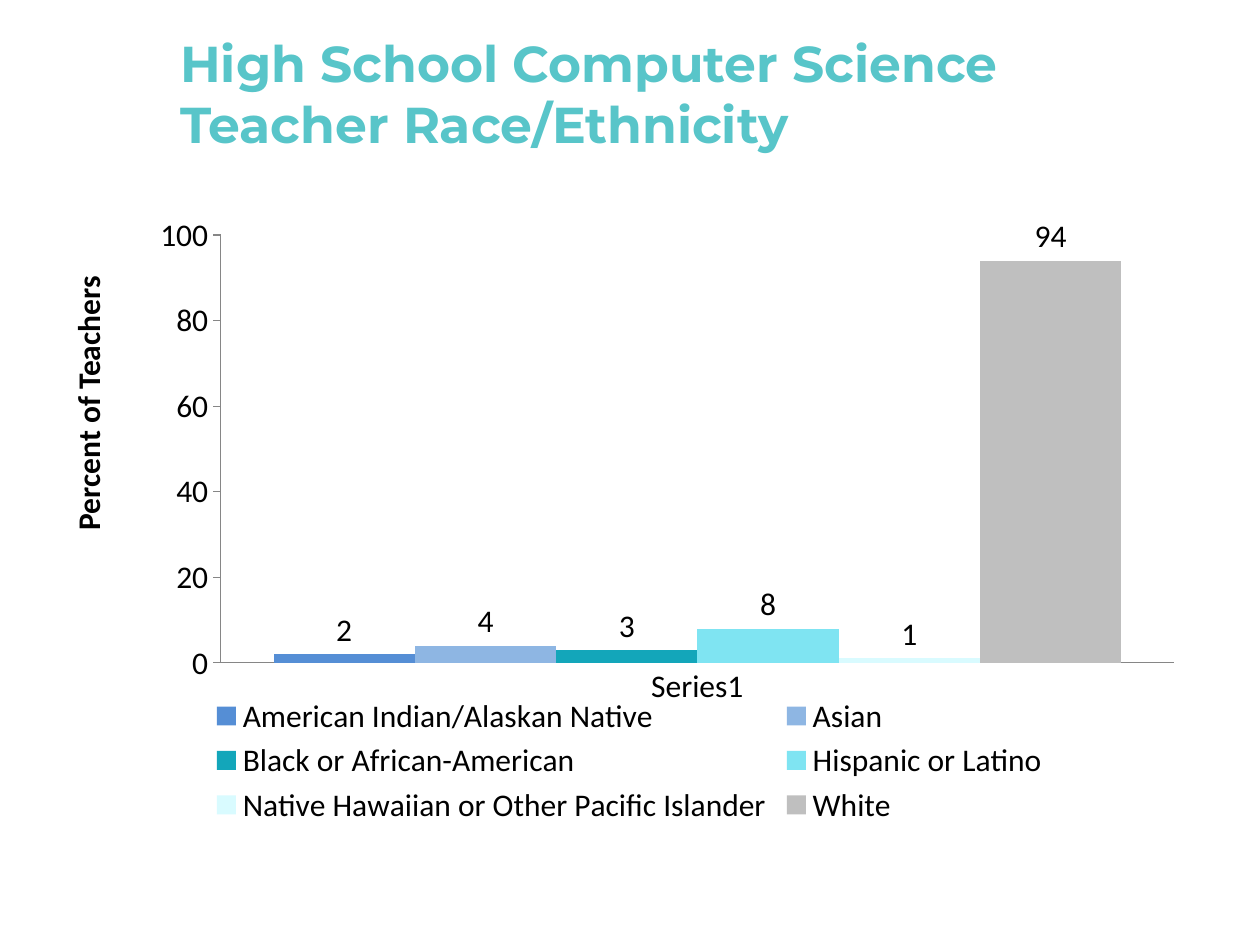
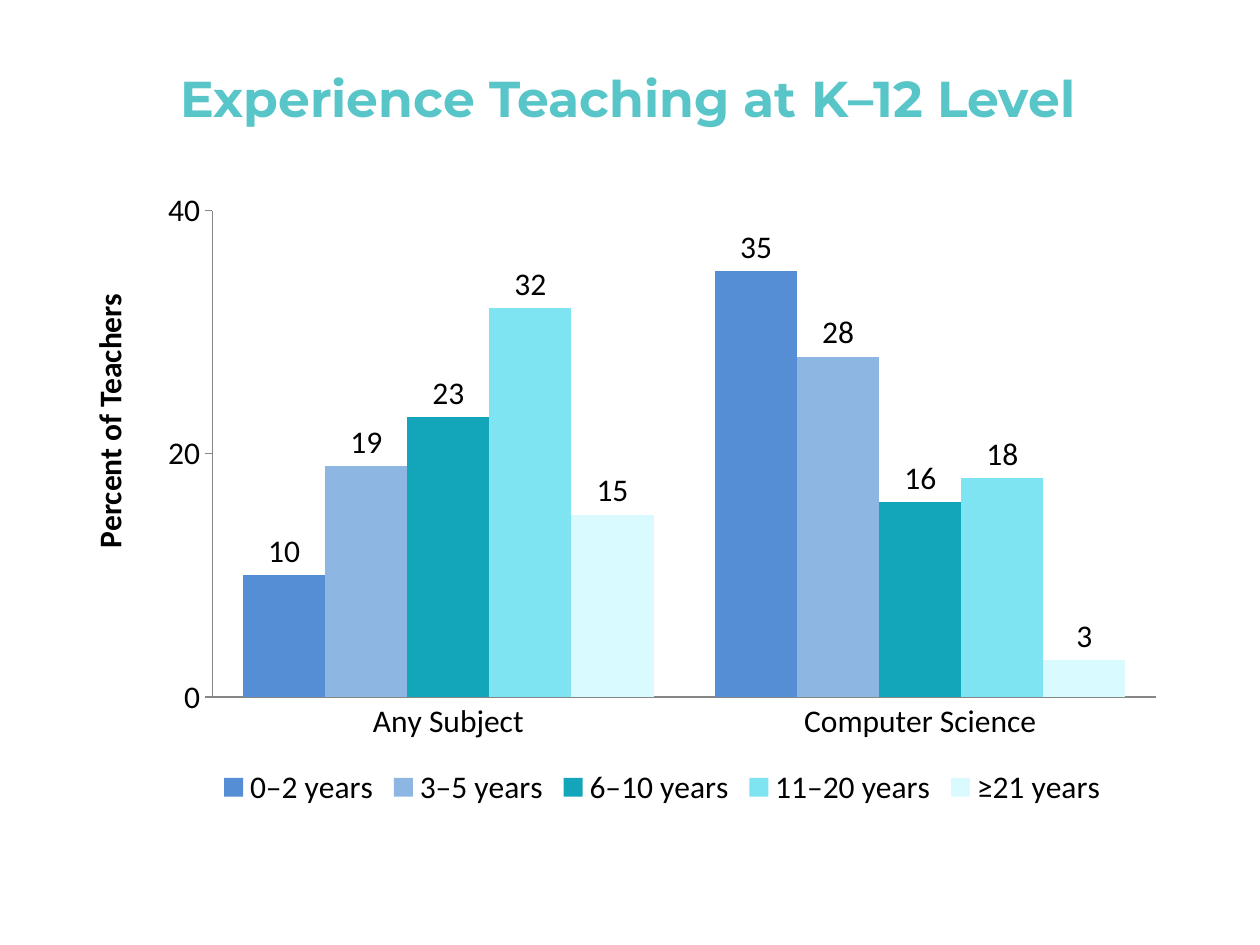
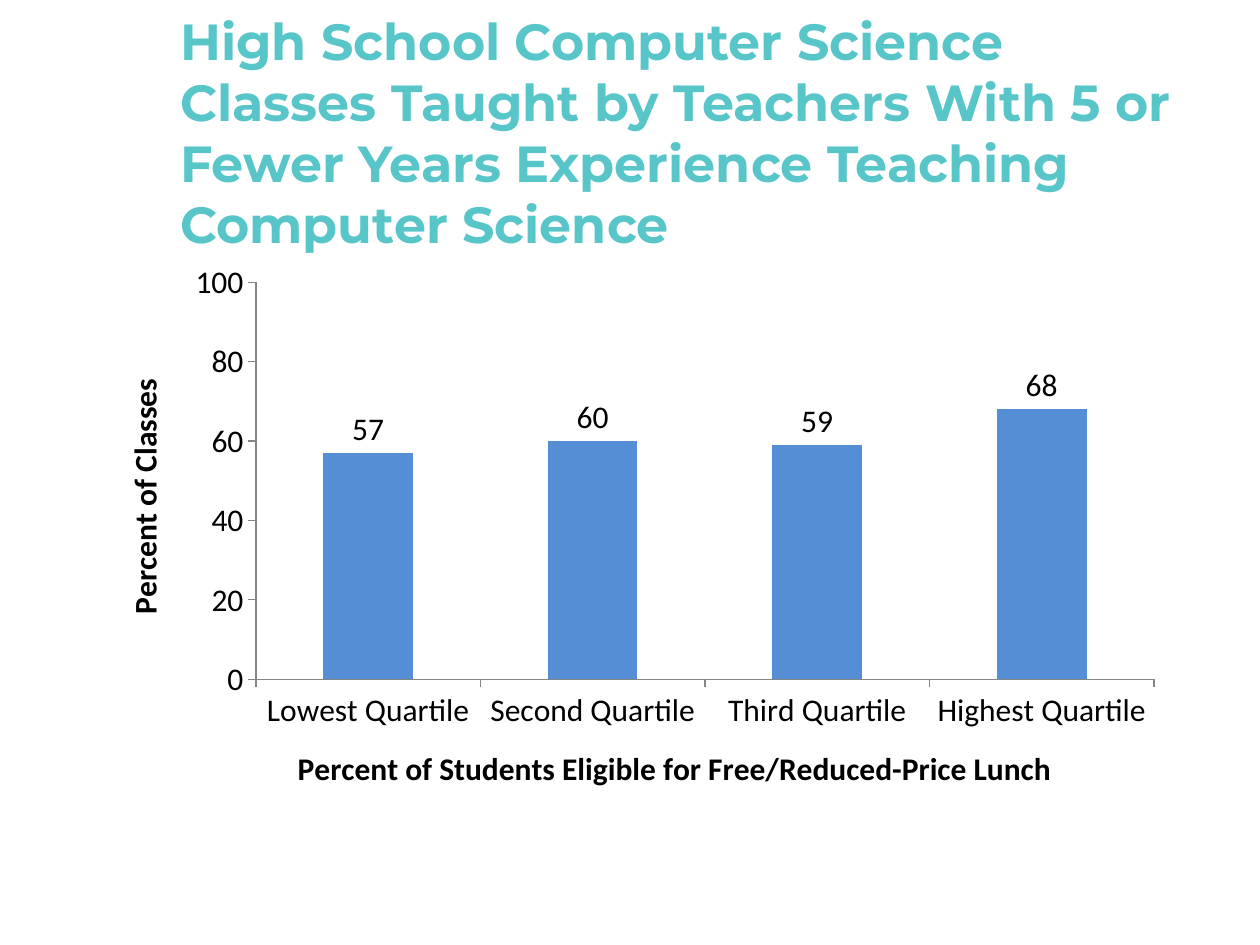
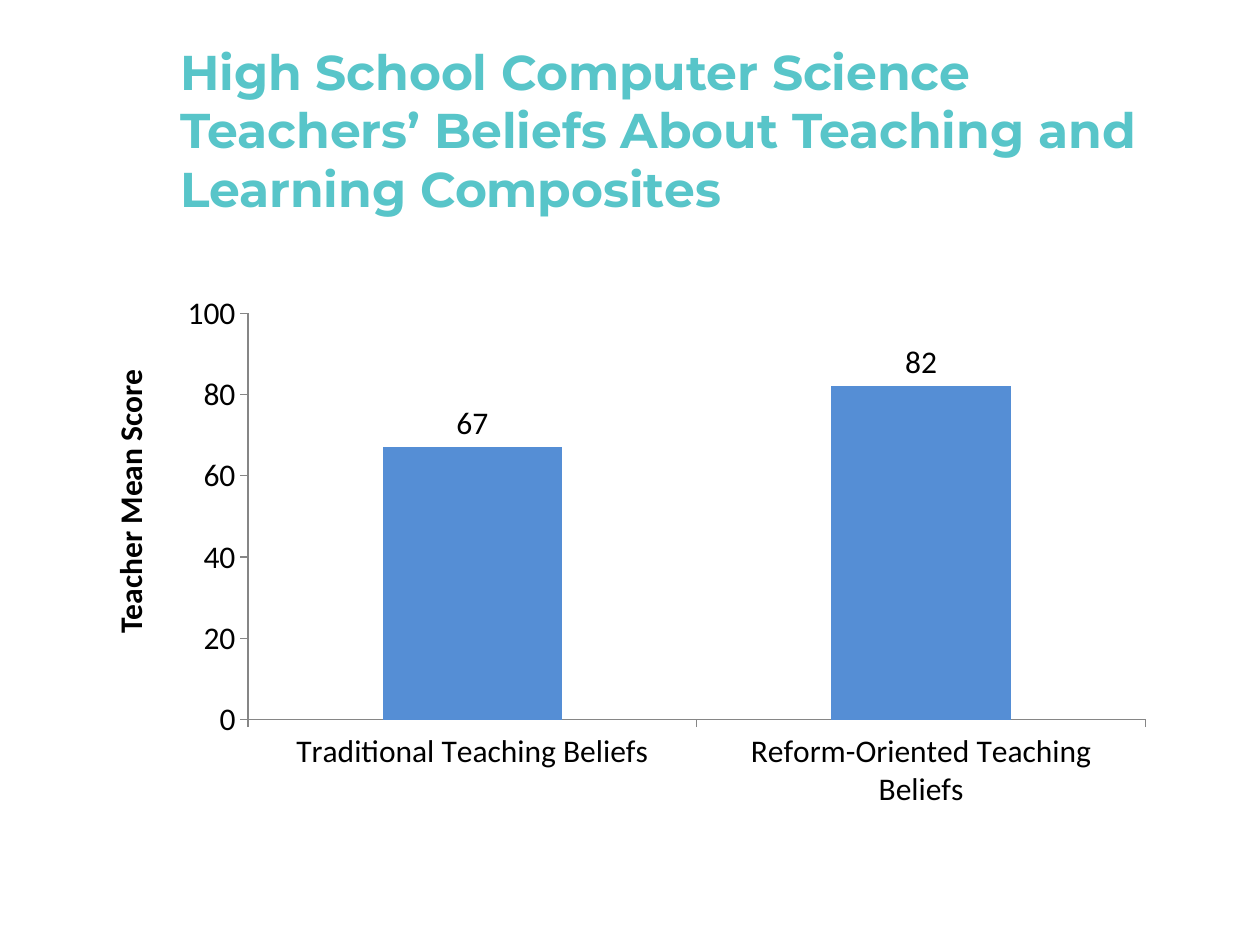
"""Builds four chart slides about high school computer science teachers."""
from dataclasses import dataclass

from lxml import etree
from pptx import Presentation
from pptx.chart.data import CategoryChartData
from pptx.dml.color import RGBColor
from pptx.enum.chart import XL_CHART_TYPE, XL_LABEL_POSITION, XL_LEGEND_POSITION, XL_TICK_MARK
from pptx.enum.text import MSO_ANCHOR, MSO_AUTO_SIZE, PP_ALIGN
from pptx.util import Pt

COLUMNS = XL_CHART_TYPE.COLUMN_CLUSTERED
OUTSIDE_END = XL_LABEL_POSITION.OUTSIDE_END
BOTTOM = XL_LEGEND_POSITION.BOTTOM
TICK_OUT, TICK_NONE = XL_TICK_MARK.OUTSIDE, XL_TICK_MARK.NONE
MIDDLE = MSO_ANCHOR.MIDDLE
FIT_NONE, FIT_SHAPE = MSO_AUTO_SIZE.NONE, MSO_AUTO_SIZE.SHAPE_TO_FIT_TEXT
LEFT, CENTER = PP_ALIGN.LEFT, PP_ALIGN.CENTER

PX = 9144
TITLE_FONT, BODY_FONT = "Montserrat", "Calibri"
TEAL, BLACK, AXIS_GREY = "58C5C9", "000000", "868686"
SERIES_COLORS = ("558ED5", "8EB6E3", "13A6BA", "7FE4F2", "D9FBFF", "BFBFBF")
BODY_SIZE = 18
INSET = 5


@dataclass(frozen=True)
class Box:
    left: int
    top: int
    width: int
    height: int

    def emu(self) -> tuple[int, ...]:
        return tuple(v * PX for v in (self.left, self.top, self.width, self.height))


@dataclass(frozen=True)
class Title:
    text: str
    box: Box
    size: float = 28.8
    shift: int = 0


@dataclass(frozen=True)
class ColumnChart:
    box: Box
    categories: tuple[str, ...]
    series: dict[str, tuple[int, ...]]
    maximum: int = 100
    gap: int = 150
    category_title: str = ""
    value_title: str = ""
    plot: tuple[float, ...] = ()


@dataclass(frozen=True)
class SideLabel:
    text: str
    box: Box


@dataclass(frozen=True)
class ChartSlide:
    title: Title
    chart: ColumnChart
    label: SideLabel | None = None


SLIDES = (
    ChartSlide(
        Title("High School Computer Science Teacher Race/Ethnicity", Box(133, 50, 817, 95), shift=-24),
        ColumnChart(
            Box(8, 167, 983, 492),
            ("Series1",),
            {
                "American Indian/Alaskan Native": (2,),
                "Asian": (4,),
                "Black or African-American": (3,),
                "Hispanic or Latino": (8,),
                "Native Hawaiian or Other Pacific Islander": (1,),
                "White": (94,),
            },
            gap=75,
            plot=(0.17, 0.04, 0.77, 0.69),
        ),
        SideLabel("Percent of Teachers", Box(-42, 300, 223, 40)),
    ),
    ChartSlide(
        Title("Experience Teaching at K–12 Level", Box(133, 30, 817, 95)),
        ColumnChart(
            Box(117, 142, 817, 503),
            ("Any Subject", "Computer Science"),
            {
                "0–2 years": (10, 35),
                "3–5 years": (19, 28),
                "6–10 years": (23, 16),
                "11–20 years": (32, 18),
                "≥21 years": (15, 3),
            },
            maximum=40,
            gap=75,
        ),
        SideLabel("Percent of Teachers", Box(-25, 314, 223, 40)),
    ),
    ChartSlide(
        Title(
            "High School Computer Science Classes Taught by Teachers With 5 or Fewer "
            "Years Experience Teaching Computer Science",
            Box(133, 33, 808, 95),
            size=29,
            shift=24,
        ),
        ColumnChart(
            Box(75, 200, 858, 450),
            ("Lowest Quartile", "Second Quartile", "Third Quartile", "Highest Quartile"),
            {"Series 1": (57, 60, 59, 68)},
            category_title="Percent of Students Eligible for Free/Reduced-Price Lunch",
            value_title="Percent of Classes",
        ),
    ),
    ChartSlide(
        Title(
            "High School Computer Science Teachers’ Beliefs About Teaching and Learning Composites",
            Box(133, 30, 817, 95),
            size=27.9,
            shift=25,
        ),
        ColumnChart(
            Box(133, 225, 792, 425),
            ("Traditional Teaching Beliefs", "Reform-Oriented Teaching Beliefs"),
            {"Series 1": (67, 82)},
        ),
        SideLabel("Teacher Mean Score", Box(-12, 378, 230, 40)),
    ),
)


def rgb(color: str) -> RGBColor:
    return RGBColor.from_string(color)


def style_font(font, name: str, size: float, color: str, bold: bool) -> None:
    font.name, font.size, font.bold = name, Pt(size), bold
    font.color.rgb = rgb(color)


def place(sp, box: Box) -> None:
    sp.left, sp.top, sp.width, sp.height = box.emu()


def add_title(slide, title: Title) -> None:
    sp = slide.shapes.title
    place(sp, title.box)
    tf = sp.text_frame
    tf.text = title.text
    tf.word_wrap, tf.auto_size, tf.vertical_anchor = True, FIT_NONE, MIDDLE
    tf.margin_top = (INSET + 2 * max(title.shift, 0)) * PX
    tf.margin_bottom = (INSET + 2 * max(-title.shift, 0)) * PX
    p = tf.paragraphs[0]
    p.alignment = LEFT
    style_font(p.runs[0].font, TITLE_FONT, title.size, TEAL, True)


def add_side_label(slide, label: SideLabel) -> None:
    sp = slide.shapes.add_textbox(*label.box.emu())
    sp.rotation = 270
    tf = sp.text_frame
    tf.text = label.text
    tf.word_wrap, tf.auto_size = False, FIT_SHAPE
    p = tf.paragraphs[0]
    p.alignment = CENTER
    style_font(p.runs[0].font, BODY_FONT, BODY_SIZE, BLACK, True)


def style_axis(axis, title: str, tick) -> None:
    axis.has_major_gridlines = False
    axis.major_tick_mark, axis.minor_tick_mark = tick, TICK_NONE
    axis.format.line.color.rgb = rgb(AXIS_GREY)
    axis.format.line.width = Pt(0.75)
    axis.has_title = bool(title)
    if title:
        tf = axis.axis_title.text_frame
        tf.text = title
        style_font(tf.paragraphs[0].runs[0].font, BODY_FONT, BODY_SIZE, BLACK, True)


def set_plot_layout(chart, plot: tuple[float, ...]) -> None:
    area = chart.element.chart.plotArea
    ns = etree.QName(area).namespace
    for old in area.findall(f"{{{ns}}}layout"):
        area.remove(old)
    layout = etree.Element(f"{{{ns}}}layout")
    manual = etree.SubElement(layout, f"{{{ns}}}manualLayout")
    values = ("inner", "edge", "edge", *plot)
    for tag, value in zip(("layoutTarget", "xMode", "yMode", "x", "y", "w", "h"), values):
        etree.SubElement(manual, f"{{{ns}}}{tag}").set("val", str(value))
    area.insert(0, layout)


def add_column_chart(slide, spec_chart: ColumnChart) -> None:
    data = CategoryChartData(number_format="0")
    data.categories = spec_chart.categories
    for name, values in spec_chart.series.items():
        data.add_series(name, values)
    chart = slide.shapes.add_chart(COLUMNS, *spec_chart.box.emu(), data).chart
    style_font(chart.font, BODY_FONT, BODY_SIZE, BLACK, False)
    chart.has_title = False
    grouped = len(spec_chart.series) > 1
    chart.has_legend = grouped
    if grouped:
        chart.legend.position, chart.legend.include_in_layout = BOTTOM, False

    style_axis(chart.category_axis, spec_chart.category_title, TICK_NONE if grouped else TICK_OUT)
    axis = chart.value_axis
    style_axis(axis, spec_chart.value_title, TICK_OUT)
    axis.minimum_scale, axis.maximum_scale, axis.major_unit = 0, spec_chart.maximum, 20

    plot = chart.plots[0]
    plot.gap_width, plot.overlap, plot.vary_by_categories = spec_chart.gap, 0, False
    for series, color in zip(plot.series, SERIES_COLORS):
        series.format.fill.solid()
        series.format.fill.fore_color.rgb = rgb(color)
        series.invert_if_negative = False
        labels = series.data_labels
        labels.show_value, labels.position = True, OUTSIDE_END
        labels.number_format, labels.number_format_is_linked = "0", False
    if spec_chart.plot:
        set_plot_layout(chart, spec_chart.plot)


def main() -> None:
    prs = Presentation()
    prs.slide_width, prs.slide_height = 1000 * PX, 750 * PX
    title_only = prs.slide_layouts[5]
    for content in SLIDES:
        slide = prs.slides.add_slide(title_only)
        add_title(slide, content.title)
        add_column_chart(slide, content.chart)
        if content.label:
            add_side_label(slide, content.label)
    prs.save("out.pptx")


if __name__ == "__main__":
    main()
